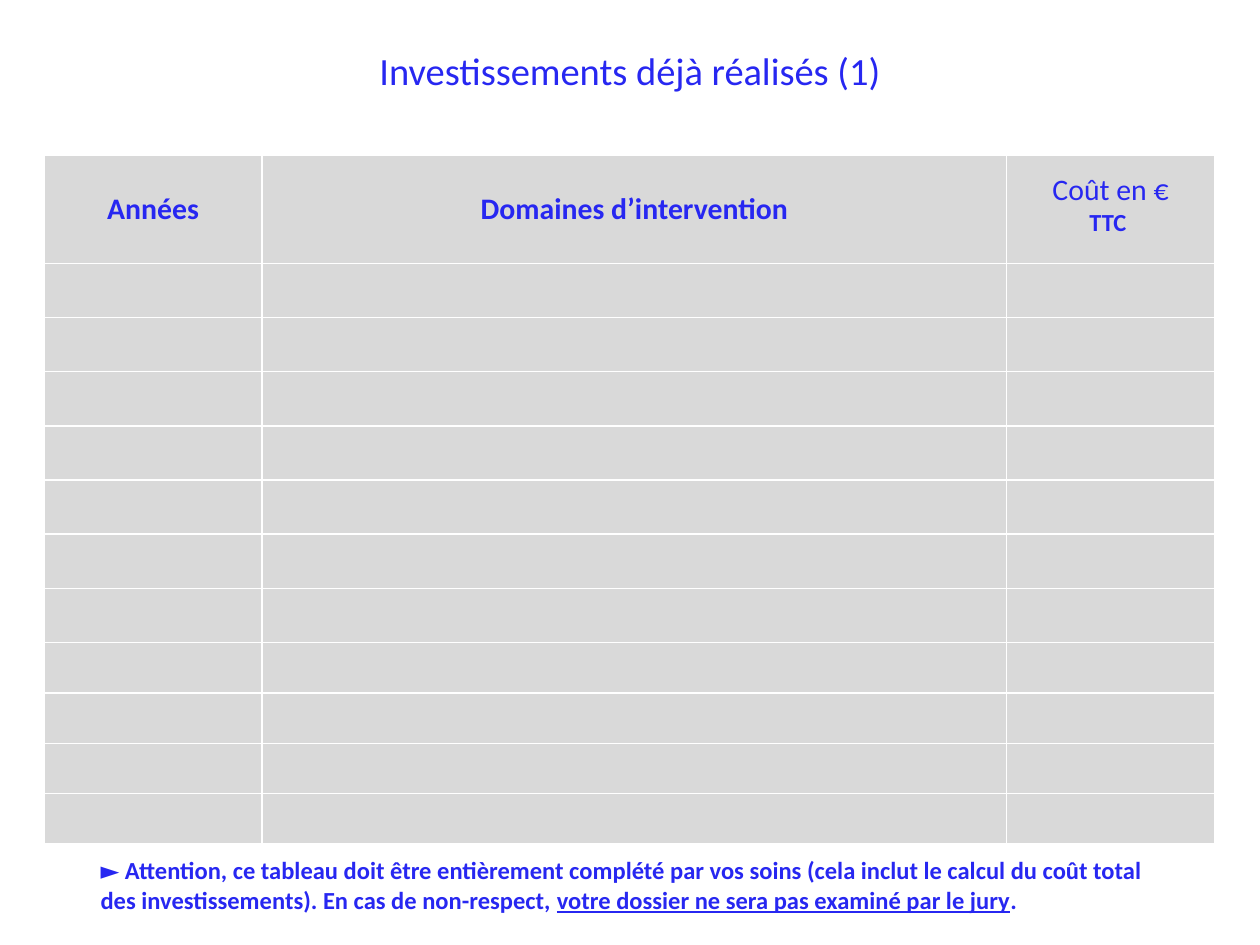
import pptx
import pptx.util
import pptx.dml.color
import pptx.enum.text
import pptx.oxml
import pptx.oxml.ns
from lxml import etree

Inches = pptx.util.Inches
Pt = pptx.util.Pt
Align = pptx.enum.text.PP_ALIGN
Anchor = pptx.enum.text.MSO_ANCHOR

COLORS = {"ink": "2727F1", "cell": "D9D9D9", "rule": "FFFFFF"}
COLS = [1.73, 5.91, 1.65]
ROWS = [0.86] + [0.43] * 7 + [0.4] * 4
HEADS = [
    [("Années", {"size": Pt(17), "bold": True})],
    [("Domaines d’intervention", {"size": Pt(17), "bold": True})],
    [("Coût en €", {"size": Pt(17)}), ("TTC ", {"size": Pt(14), "bold": True})],
]


def color(name):
    return pptx.dml.color.RGBColor.from_string(COLORS[name])


def apply(item, values):
    for name, value in values.items():
        setattr(item, name, value)


def write(para, text, style):
    run = para.add_run()
    run.text = text
    apply(run.font, {"name": "Calibri", **style})
    run.font.color.rgb = color("ink")


def add_box(slide, box, anchor):
    """Add a wrapping text box and return its first paragraph."""
    frame = slide.shapes.add_textbox(*map(Inches, box)).text_frame
    apply(frame, {"word_wrap": True, "vertical_anchor": anchor})
    return frame.paragraphs[0]


def add_title(slide, box):
    para = add_box(slide, box, Anchor.MIDDLE)
    para.alignment = Align.CENTER
    write(para, "Investissements déjà réalisés (1)", {"size": Pt(22)})


def add_note(slide, box):
    para = add_box(slide, box, Anchor.TOP)
    style = {"size": Pt(14), "bold": True}
    write(para, "► Attention, ce tableau doit être entièrement complété par vos "
          "soins (cela inclut le calcul du coût total des investissements). "
          "En cas de non-respect, ", style)
    write(para, "votre dossier ne sera pas examiné par le jury",
          {**style, "underline": True})
    write(para, ".", style)


def rule_cell(cell):
    """Draw a thin border on each side of a cell."""
    qn = pptx.oxml.ns.qn
    props = cell._tc.get_or_add_tcPr()
    for place, side in enumerate(("lnL", "lnR", "lnT", "lnB")):
        line = etree.Element(qn("a:" + side), w=str(Pt(1)))
        fill = etree.SubElement(line, qn("a:solidFill"))
        etree.SubElement(fill, qn("a:srgbClr"), val=COLORS["rule"])
        props.insert(place, line)


def add_grid(slide, left, top):
    size = map(Inches, (left, top, sum(COLS), sum(ROWS)))
    table = slide.shapes.add_table(len(ROWS), len(COLS), *size).table
    for col, width in zip(table.columns, COLS):
        col.width = Inches(width)
    for row, height in zip(table.rows, ROWS):
        row.height = Inches(height)
    edge = Inches(0.01)
    for cell in table.iter_cells():
        apply(cell, {"margin_left": edge, "margin_right": edge,
                     "margin_top": edge, "margin_bottom": 0,
                     "vertical_anchor": Anchor.MIDDLE})
        cell.fill.solid()
        cell.fill.fore_color.rgb = color("cell")
        rule_cell(cell)
    for cell, lines in zip(table.rows[0].cells, HEADS):
        frame = cell.text_frame
        for place, (text, style) in enumerate(lines):
            para = frame.add_paragraph() if place else frame.paragraphs[0]
            para.alignment = Align.CENTER
            write(para, text, style)
    table.cell(0, 2).margin_bottom = Inches(0.08)


def main():
    deck = pptx.Presentation()
    deck.slide_width, deck.slide_height = Inches(10), Inches(7.5)
    slide = deck.slides.add_slide(deck.slide_layouts[6])
    add_grid(slide, 0.35, 1.23)
    add_title(slide, (0, 0.13, 10, 0.86))
    add_note(slide, (0.7, 6.74, 8.6, 0.57))
    deck.save("out.pptx")


if __name__ == "__main__":
    main()
